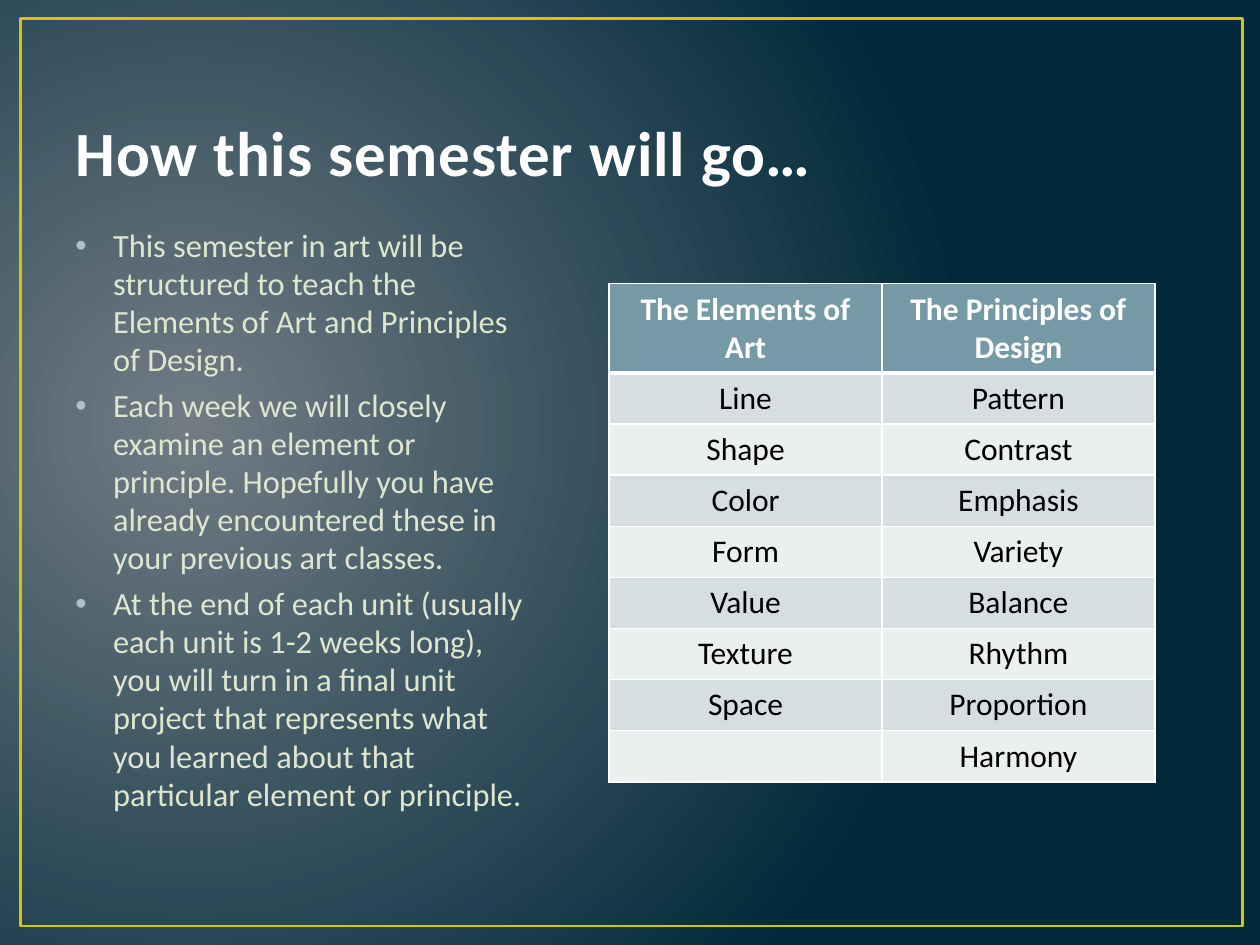
from lxml import etree
from pptx import Presentation
from pptx.dml.color import RGBColor
from pptx.enum.shapes import MSO_SHAPE
from pptx.enum.text import MSO_ANCHOR, PP_ALIGN
from pptx.oxml.ns import qn
from pptx.util import Cm, Pt

RECTANGLE = MSO_SHAPE.RECTANGLE
BOTTOM = MSO_ANCHOR.BOTTOM
LEFT, CENTER = PP_ALIGN.LEFT, PP_ALIGN.CENTER
TITLE_ONLY = 5

FONT = "Calibri"
GLOW = RGBColor(0x71, 0x7C, 0x84)
NAVY = RGBColor(0x01, 0x29, 0x3A)
GOLD = RGBColor(0xCF, 0xC6, 0x0D)
TITLE_WHITE = RGBColor(0xFE, 0xFE, 0xFE)
CREAM = RGBColor(0xDF, 0xE6, 0xD0)
BULLET_BLUE = RGBColor(0xAC, 0xC2, 0xC9)
WHITE = RGBColor(0xFF, 0xFF, 0xFF)
BLACK = RGBColor(0x00, 0x00, 0x00)
HEADER_TEAL = RGBColor(0x75, 0x9A, 0xA5)
BANDS = [RGBColor(0xD6, 0xDE, 0xE1), RGBColor(0xEC, 0xEF, 0xF0)]

TITLE = "How this semester will go…"
POINTS = [
    "This semester in art will be structured to teach the Elements of Art "
    "and Principles of Design.",
    "Each week we will closely examine an element or principle. Hopefully you "
    "have already encountered these in your previous art classes.",
    "At the end of each unit (usually each unit is 1-2 weeks long), you will "
    "turn in a final unit project that represents what you learned about that "
    "particular element or principle.",
]
ROWS = [
    ("The Elements of Art", "The Principles of Design"),
    ("Line", "Pattern"),
    ("Shape", "Contrast"),
    ("Color", "Emphasis"),
    ("Form", "Variety"),
    ("Value", "Balance"),
    ("Texture", "Rhythm"),
    ("Space", "Proportion"),
    ("", "Harmony"),
]


def add_child(parent, tag, **attributes):
    child = etree.SubElement(parent, qn(tag))
    for name, value in attributes.items():
        child.set(name, str(value))
    return child


def style_font(font, size, color, bold=False):
    font.name = FONT
    font.size = Pt(size)
    font.bold = bold
    font.color.rgb = color


def paint_background(page):
    fill = page.background.fill
    fill.gradient()
    for stop, color, position in zip(fill.gradient_stops, (GLOW, NAVY), (0, 1)):
        stop.color.rgb = color
        stop.position = position
    # Turn the linear gradient into a circular one
    gradient = page.element.find(".//" + qn("a:gradFill"))
    gradient.remove(gradient.find(qn("a:lin")))
    circle = add_child(gradient, "a:path", path="circle")
    add_child(circle, "a:fillToRect", l=15000, t=50000, r=85000, b=60000)


def add_frame(page):
    frame = page.shapes.add_shape(RECTANGLE, Cm(0.41), Cm(0.38), Cm(24.64), Cm(18.29))
    frame.shadow.inherit = False
    frame.fill.background()
    frame.line.color.rgb = GOLD
    frame.line.width = Pt(1.5)


def set_title(page):
    title = page.shapes.title
    title.left, title.top = Cm(1.27), Cm(0.76)
    title.width, title.height = Cm(22.86), Cm(3.18)
    title.text_frame.text = TITLE
    title.text_frame.vertical_anchor = BOTTOM
    para = title.text_frame.paragraphs[0]
    para.alignment = LEFT
    style_font(para.font, 36, TITLE_WHITE, bold=True)
    para.runs[0].font._element.set("spc", "50")


def add_bullet(para):
    properties = para._p.get_or_add_pPr()
    properties.set("marL", str(Cm(0.76)))
    properties.set("indent", str(-Cm(0.76)))
    color = add_child(properties, "a:buClr")
    add_child(color, "a:srgbClr", val=BULLET_BLUE)
    add_child(properties, "a:buFont", typeface="Arial")
    add_child(properties, "a:buChar", char="•")


def add_points(page):
    box = page.shapes.add_textbox(Cm(1.27), Cm(4.45), Cm(9.53), Cm(12.57))
    frame = box.text_frame
    frame.word_wrap = True
    for index, point in enumerate(POINTS):
        para = frame.paragraphs[0] if index == 0 else frame.add_paragraph()
        para.text = point
        para.line_spacing = 0.98
        para.space_before = Pt(4.4)
        add_bullet(para)
        style_font(para.font, 18.5, CREAM)


def set_borders(cell, bottom, top):
    properties = cell._tc.get_or_add_tcPr()
    widths = {"a:lnL": 1, "a:lnR": 1, "a:lnT": top, "a:lnB": bottom}
    for position, (tag, width) in enumerate(widths.items()):
        line = etree.Element(qn(tag), w=str(Pt(width)))
        solid = add_child(line, "a:solidFill")
        add_child(solid, "a:srgbClr", val=WHITE)
        properties.insert(position, line)


def fill_cell(cell, text, row):
    header = row == 0
    cell.fill.solid()
    cell.fill.fore_color.rgb = HEADER_TEAL if header else BANDS[(row - 1) % 2]
    cell.vertical_anchor = BOTTOM
    cell.text = text
    para = cell.text_frame.paragraphs[0]
    para.alignment = CENTER
    style_font(para.font, 18, WHITE if header else BLACK, bold=header)
    set_borders(cell, bottom=3 if header else 1, top=3 if row == 1 else 1)


def add_topics(page):
    table = page.shapes.add_table(
        len(ROWS), 2, Cm(12.28), Cm(5.72), Cm(11), Cm(10.04)).table
    for column in table.columns:
        column.width = Cm(5.5)
    for row, texts in enumerate(ROWS):
        table.rows[row].height = Cm(1.8 if row == 0 else 1.03)
        for column, text in enumerate(texts):
            fill_cell(table.cell(row, column), text, row)


def main():
    deck = Presentation()
    deck.slide_width, deck.slide_height = Cm(25.4), Cm(19.05)
    page = deck.slides.add_slide(deck.slide_layouts[TITLE_ONLY])
    paint_background(page)
    add_frame(page)
    set_title(page)
    add_points(page)
    add_topics(page)
    deck.save("out.pptx")


if __name__ == "__main__":
    main()
